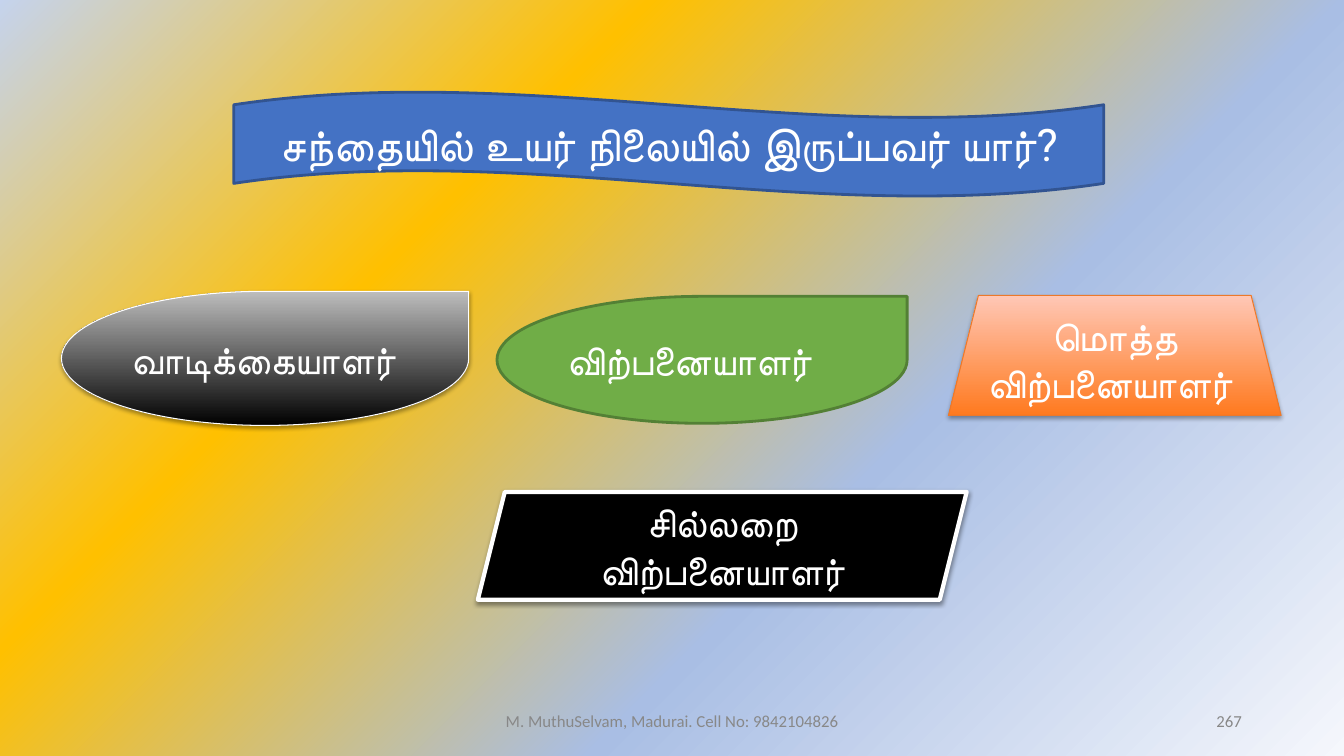
from lxml import etree
from pptx import Presentation
from pptx.dml.color import RGBColor
from pptx.enum import shapes, text
from pptx.oxml import ns
from pptx.util import Pt

KIND = shapes.MSO_SHAPE
ALIGN = text.PP_ALIGN

THEME = {
    "white": "FFFFFF", "black": "000000", "grey": "888888",
    "blue": "4472C4", "navy": "325491",
    "green": "70AD47", "moss": "538035", "rust": "EC792B",
    "ash": [(0, "000000"), (100, "BDBDBD")],
    "peach": [(0, "FF7A1F"), (100, "FFC7B6")],
    "sky": [(0, "F5F7FC"), (36, "A9BEE4"), (69, "FFC000"), (100, "C5D3ED")],
    "body": "Roboto", "foot": "Calibri",
    "title": 32, "answer": 28, "small": 12,
}

# kind, box, fill, (line colour, width), shadow (opacity, blur, distance), size, align, words
CARDS = [
    (KIND.WAVE, (167, 65.5, 621.4, 74.9), "blue", ("navy", 2), None,
     "title", ALIGN.CENTER, "சந்தையில் உயர் நிலையில் இருப்பவர் யார்?"),
    (KIND.TEAR, (43.9, 208.1, 290.9, 95.8), "ash", ("white", 0.75), (35, 3.1, 1.8),
     "answer", ALIGN.LEFT, "வாடிக்கையாளர் "),
    (KIND.TRAPEZOID, (677.5, 211, 237.6, 85.7), "peach", ("rust", 0.75), (35, 3.1, 1.8),
     "answer", ALIGN.CENTER, "மொத்த விற்பனையாளர் "),
    (KIND.PARALLELOGRAM, (341.3, 351.4, 349.2, 77), "black", ("white", 3), (38, 3.1, 1.6),
     "answer", ALIGN.CENTER, "சில்லறை விற்பனையாளர்"),
    (KIND.TEAR, (355, 211.7, 293, 90.7), "green", ("moss", 2), None,
     "answer", ALIGN.LEFT, "விற்பனையாளர் "),
]
# left, width, align, words
FOOT = [
    (318.2, 324, ALIGN.CENTER, "M. MuthuSelvam, Madurai. Cell No: 9842104826"),
    (678.2, 216, ALIGN.RIGHT, "267"),
]
FOOT_TOP, FOOT_HIGH = 500.4, 28.8


def tint(name):
    return RGBColor.from_string(THEME[name])


def node(tag, body, attrs=""):
    return etree.fromstring(
        f'<a:{tag} xmlns:a="{ns.nsuri("a")}" {attrs}>{body}</a:{tag}>')


def blend(fill, parent, name, way):
    """Swap the solid fill inside parent for the named gradient."""
    fill.solid()
    stops = "".join(
        f'<a:gs pos="{pos * 1000}"><a:srgbClr val="{hue}"/></a:gs>'
        for pos, hue in THEME[name])
    grad = node("gradFill", f"<a:gsLst>{stops}</a:gsLst>{way}", 'rotWithShape="1"')
    old = parent.find(ns.qn("a:solidFill"))
    parent.replace(old, grad)


def shade(shape, alpha, blur, dist):
    glow = node(
        "outerShdw",
        f'<a:srgbClr val="{THEME["black"]}"><a:alpha val="{alpha * 1000}"/></a:srgbClr>',
        f'blurRad="{Pt(blur)}" dist="{Pt(dist)}" dir="5400000" '
        'algn="ctr" rotWithShape="0"')
    shape._element.spPr.find(ns.qn("a:effectLst")).append(glow)


def write(shape, words, face, size, hue, align):
    frame = shape.text_frame
    frame.word_wrap = True
    frame.vertical_anchor = text.MSO_ANCHOR.MIDDLE
    frame.text = words
    para = frame.paragraphs[0]
    para.alignment = align
    font = para.runs[0].font
    font.name, font.size = THEME[face], Pt(THEME[size])
    font.color.rgb = tint(hue)


def card(slide, kind, box, fill, line, shadow, size, align, words):
    shape = slide.shapes.add_shape(kind, *map(Pt, box))
    if isinstance(THEME[fill], list):
        blend(shape.fill, shape._element.spPr, fill,
              '<a:lin ang="16200000" scaled="0"/>')
    else:
        shape.fill.solid()
        shape.fill.fore_color.rgb = tint(fill)
    hue, width = line
    shape.line.color.rgb = tint(hue)
    shape.line.width = Pt(width)
    shape.shadow.inherit = False
    if shadow:
        shade(shape, *shadow)
    write(shape, words, "body", size, "white", align)


def main():
    deck = Presentation()
    deck.slide_width, deck.slide_height = Pt(960), Pt(540)
    slide = deck.slides.add_slide(deck.slide_layouts[6])

    back = slide.background.fill
    base = slide._element.find(".//" + ns.qn("p:bgPr"))
    blend(back, base, "sky",
          '<a:path path="circle"><a:fillToRect l="100000" t="100000"/></a:path>')

    for item in CARDS:
        card(slide, *item)
    for left, width, align, words in FOOT:
        box = slide.shapes.add_textbox(
            Pt(left), Pt(FOOT_TOP), Pt(width), Pt(FOOT_HIGH))
        write(box, words, "foot", "small", "grey", align)

    deck.save("out.pptx")


if __name__ == "__main__":
    main()
